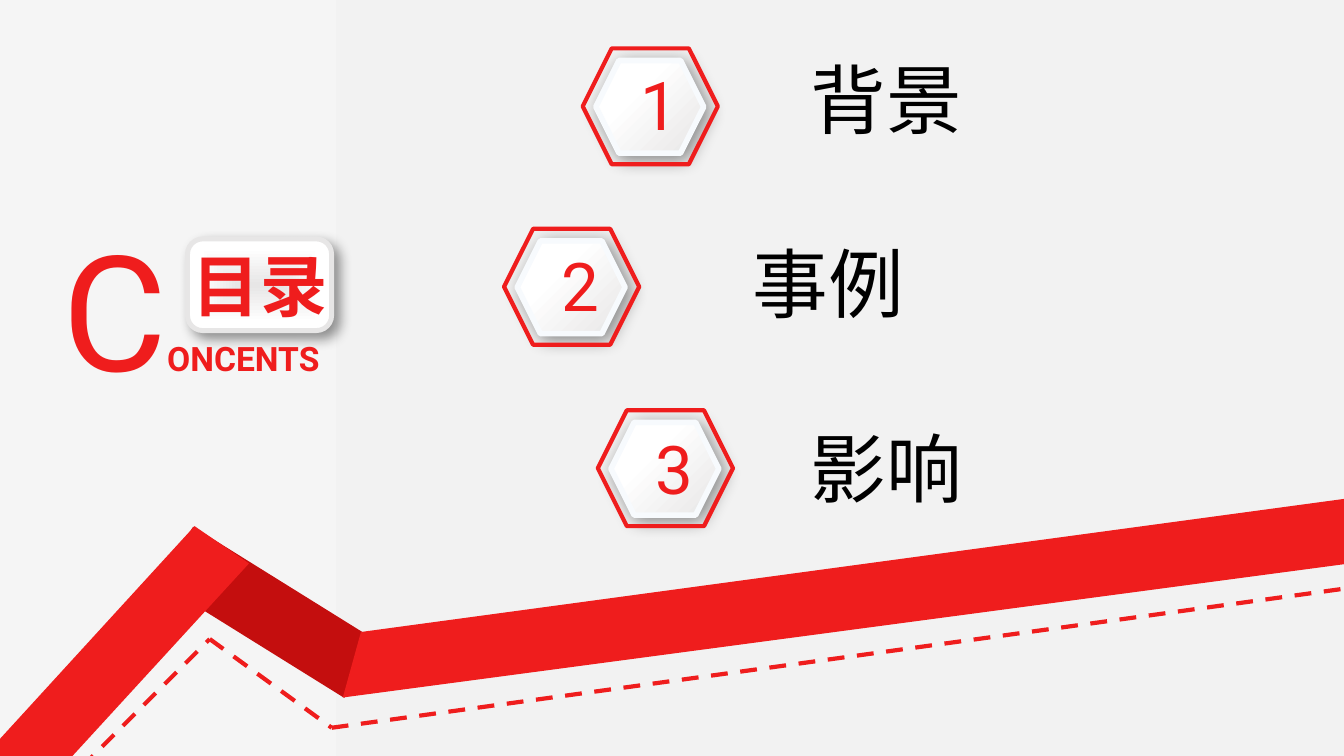
from dataclasses import dataclass

from lxml import etree
from pptx import Presentation
from pptx.dml.color import RGBColor
from pptx.enum import dml, shapes, text
from pptx.oxml import ns
from pptx.util import Inches, Pt

RED, DARK_RED, BLACK = "EF1D1D", "C40E0E", "000000"
LATIN, CHINESE = "Roboto", "Noto Sans CJK SC"
Point = tuple[float, float]
Box = tuple[float, float, float, float]


@dataclass(frozen=True)
class Run:
    wording: str
    size: float
    font: str = LATIN
    color: str = RED
    bold: bool = False


@dataclass(frozen=True)
class Chapter:
    number: str
    title: str
    badge: Point
    digit: Point
    heading: Point


@dataclass(frozen=True)
class Shadow:
    opacity: int
    blur: float
    distance: float


CHAPTERS = [
    Chapter("1", "背景", (5.78, 0.48), (6.25, 0.58), (7.94, 0.48)),
    Chapter("2", "事例", (5.0, 2.27), (5.47, 2.37), (7.37, 2.3)),
    Chapter("3", "影响", (5.93, 4.07), (6.4, 4.19), (7.94, 4.14)),
]
RIBBONS = [
    [(-0.53, 7.91), (1.93, 5.22), (2.47, 5.59), (-0.06, 8.35)],
    [(3.58, 6.27), (15.1, 4.71), (15.19, 5.35), (3.4, 6.92)],
]
DASHES = [(0.6, 7.82), (2.08, 6.34), (3.29, 7.22), (13.48, 5.82)]


def rgb(value: str) -> RGBColor:
    return RGBColor.from_string(value)


def paint_gradient(fill, stops: list[tuple[float, str]], angle: float) -> None:
    fill.gradient()
    fill.gradient_angle = angle
    for stop, (position, color) in zip(fill.gradient_stops, stops):
        stop.position = position
        stop.color.rgb = rgb(color)


def add_solid(slide, kind, box: Box, fill: str | None = None,
              line: str | None = None, width: float = 0):
    solid = slide.shapes.add_shape(kind, *map(Inches, box))
    solid.shadow.inherit = False
    if fill:
        solid.fill.solid()
        solid.fill.fore_color.rgb = rgb(fill)
    else:
        solid.fill.background()
    if line:
        solid.line.color.rgb = rgb(line)
        solid.line.width = Pt(width)
    else:
        solid.line.fill.background()
    return solid


def cast_shadow(solid, shadow: Shadow) -> None:
    effects = solid._element.spPr.find(ns.qn("a:effectLst"))
    outer = etree.SubElement(
        effects, ns.qn("a:outerShdw"), blurRad=str(Pt(shadow.blur)),
        dist=str(Pt(shadow.distance)), dir="2700000", algn="tl", rotWithShape="0")
    color = etree.SubElement(outer, ns.qn("a:srgbClr"), val=BLACK)
    etree.SubElement(color, ns.qn("a:alpha"), val=str(shadow.opacity * 1000))


def add_label(slide, box: Box, runs: list[Run], centered: bool = False) -> None:
    label = slide.shapes.add_textbox(*map(Inches, box))
    frame = label.text_frame
    frame.word_wrap = True
    frame.auto_size = text.MSO_AUTO_SIZE.SHAPE_TO_FIT_TEXT
    paragraph = frame.paragraphs[0]
    if centered:
        paragraph.alignment = text.PP_ALIGN.CENTER
    for item in runs:
        run = paragraph.add_run()
        run.text = item.wording
        run.font.size = Pt(item.size)
        run.font.name = item.font
        run.font.bold = item.bold
        run.font.color.rgb = rgb(item.color)
        etree.SubElement(run.font._element, ns.qn("a:ea"), typeface=item.font)


def add_ribbon(slide, corners: list[Point]) -> None:
    builder = slide.shapes.build_freeform(
        Inches(corners[0][0]), Inches(corners[0][1]))
    builder.add_line_segments(
        [(Inches(x), Inches(y)) for x, y in corners[1:]], close=True)
    ribbon = builder.convert_to_shape()
    ribbon.shadow.inherit = False
    ribbon.fill.solid()
    ribbon.fill.fore_color.rgb = rgb(RED)
    ribbon.line.fill.background()


def add_dash(slide, start: Point, end: Point) -> None:
    dash = slide.shapes.add_connector(
        shapes.MSO_CONNECTOR.STRAIGHT, *map(Inches, start + end))
    dash.line.color.rgb = rgb(RED)
    dash.line.width = Pt(3)
    dash.line.dash_style = dml.MSO_LINE.DASH
    etree.SubElement(dash._element.spPr, ns.qn("a:effectLst"))


def add_contents_title(slide) -> None:
    plate = add_solid(slide, shapes.MSO_SHAPE.ROUNDED_RECTANGLE,
                      (1.86, 2.37, 1.43, 0.91), "FFFFFF", "E7E6E6", 3.5)
    paint_gradient(plate.fill, [(0, "E7E6E6"), (0.81, "FFFFFF")], 0)
    gradient = plate._element.spPr.find(ns.qn("a:gradFill"))
    gradient.remove(gradient.find(ns.qn("a:lin")))
    center = etree.SubElement(gradient, ns.qn("a:path"))
    center.set("path", "rect")
    etree.SubElement(center, ns.qn("a:fillToRect"),
                     l="50000", t="50000", r="50000", b="50000")
    cast_shadow(plate, Shadow(42, 9, 6))
    add_label(slide, (1.4, 2.37, 2.36, 0.91),
              [Run("目录", 48, CHINESE, bold=True)], centered=True)
    add_label(slide, (0.52, 2.04, 3.6, 2.04),
              [Run("C", 115), Run("ONCENTS", 24, bold=True)])


def add_chapter(slide, chapter: Chapter) -> None:
    left, top = chapter.badge
    core = add_solid(slide, shapes.MSO_SHAPE.HEXAGON,
                     (left + 0.13, top + 0.12, 1.07, 0.92),
                     "FFFFFF", "F7FAFD", 4)
    paint_gradient(core.fill, [(0.34, "FFFFFF"), (1, "E7E6E6")], 315)
    cast_shadow(core, Shadow(43, 13, 4))
    add_solid(slide, shapes.MSO_SHAPE.HEXAGON, (left, top, 1.34, 1.15),
              line=RED, width=3)
    add_label(slide, (*chapter.digit, 0.4, 0.91),
              [Run(chapter.number, 48)], centered=True)
    add_label(slide, (*chapter.heading, 3.77, 1.01),
              [Run(chapter.title, 54, CHINESE, BLACK)])


def main() -> None:
    """Build the contents slide with three numbered chapters."""
    deck = Presentation()
    deck.slide_width, deck.slide_height = Inches(13.33), Inches(7.5)
    slide = deck.slides.add_slide(deck.slide_layouts[6])
    paint_gradient(slide.background.fill, [(0, "F5F5F5"), (0.5, "F2F2F2")], 0)
    fold = add_solid(slide, shapes.MSO_SHAPE.RECTANGLE,
                     (1.58, 5.75, 2.17, 0.65), DARK_RED)
    fold.rotation = 31.9
    for corners in RIBBONS:
        add_ribbon(slide, corners)
    add_contents_title(slide)
    for chapter in CHAPTERS:
        add_chapter(slide, chapter)
    for start, end in zip(DASHES, DASHES[1:]):
        add_dash(slide, start, end)
    deck.save("out.pptx")


if __name__ == "__main__":
    main()
